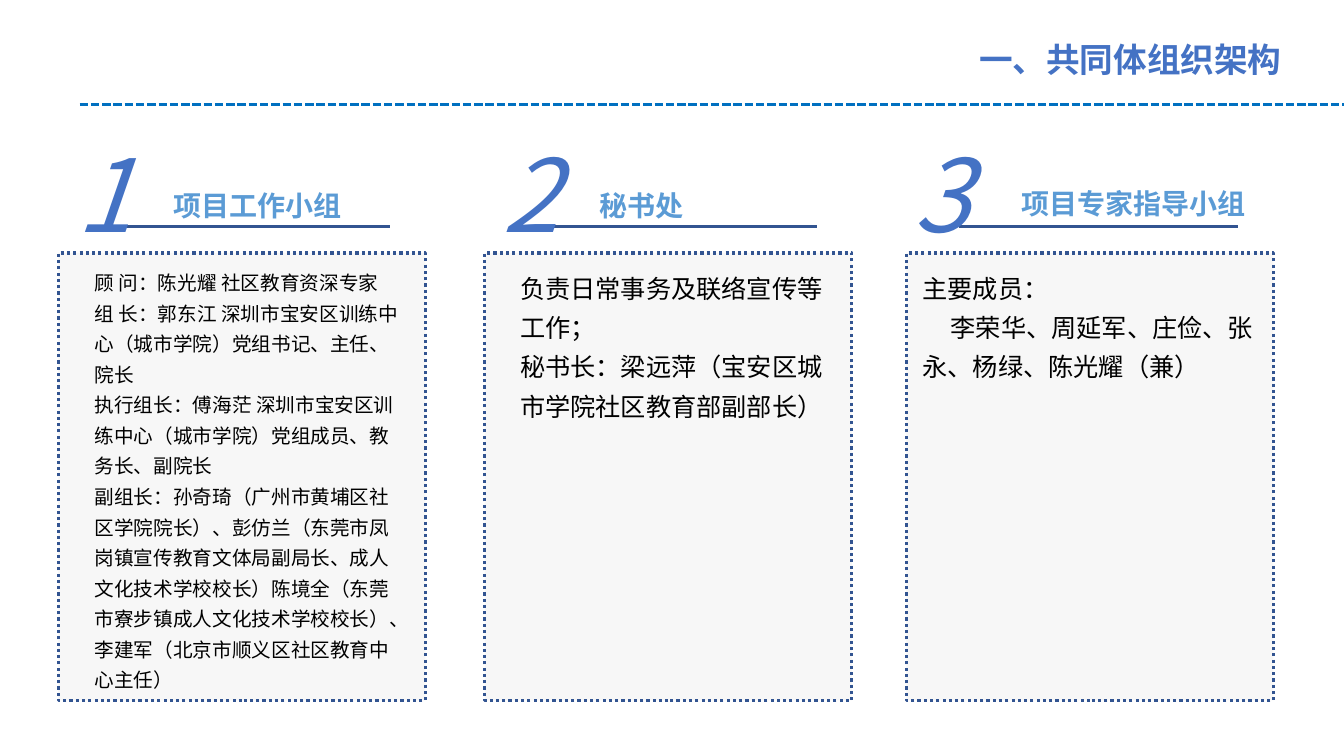
from pptx import Presentation
from pptx.dml.color import RGBColor
from pptx.enum import dml, shapes, text
from pptx.oxml import ns
from pptx.util import Inches, Pt
from lxml import etree

BLUE = RGBColor(0x44, 0x72, 0xC4)
SKY = RGBColor(0x5B, 0x9B, 0xD5)
NAVY = RGBColor(0x32, 0x54, 0x91)
TEAL = RGBColor(0x00, 0x70, 0xC0)
GREY = RGBColor(0xF2, 0xF2, 0xF2)
BLACK = RGBColor(0, 0, 0)
SANS = "Noto Sans CJK SC"
BOLD = "Noto Sans CJK JP"
DASH = dml.MSO_LINE

COLS = [
    dict(num="1", left=0.58, digit=0.66, head="项目工作小组", spot=(1.59, 1.8, 3.85, 0.47),
         body=(0.84, 2.57, 3.29, 4.38), size=14, paras=[
             ("顾 问：陈光耀 社区教育资深专家", 0),
             ("组 长：郭东江 深圳市宝安区训练中心（城市学院）党组书记、主任、院长", 0),
             ("执行组长：傅海茫 深圳市宝安区训练中心（城市学院）党组成员、教务长、副院长", 0),
             ("副组长：孙奇琦（广州市黄埔区社区学院院长）、彭仿兰（东莞市凤岗镇宣传教育文体局副局长、"
              "成人文化技术学校校长）陈境全（东莞市寮步镇成人文化技术学校校长）、"
              "李建军（北京市顺义区社区教育中心主任）", 0)]),
    dict(num="2", left=4.81, digit=4.89, head="秘书处", spot=(5.82, 1.8, 3.85, 0.47),
         body=(5.06, 2.57, 3.29, 1.67), size=18, paras=[
             ("负责日常事务及联络宣传等工作；", 0),
             ("秘书长：梁远萍（宝安区城市学院社区教育部副部长）", 0)]),
    dict(num="3", left=8.99, digit=8.96, head="项目专家指导小组", spot=(10, 1.78, 2.68, 0.47),
         body=(9.05, 2.57, 3.48, 1.28), size=18, paras=[
             ("主要成员：", 0),
             ("李荣华、周延军、庄俭、张永、杨绿、陈光耀（兼）", 0.28)]),
]


def add_run(para, words, size, color, face=SANS, bold=False, italic=False):
    """Add one styled run to a paragraph."""
    run = para.add_run()
    run.text = words
    font = run.font
    font.size, font.bold, font.italic, font.name = Pt(size), bold, italic, face
    font.color.rgb = color
    east = etree.SubElement(run._r.get_or_add_rPr(), ns.qn("a:ea"))
    east.set("typeface", face)


def add_box(slide, spot):
    """Add a wrapping text box and return its frame."""
    frame = slide.shapes.add_textbox(*map(Inches, spot)).text_frame
    frame.word_wrap = True
    return frame


def add_line(slide, start, end, y, color, width, dash=None):
    """Draw a level line without shadow."""
    line = slide.shapes.add_connector(shapes.MSO_CONNECTOR.STRAIGHT, Inches(start), Inches(y),
                                      Inches(end), Inches(y))
    line.line.color.rgb = color
    line.line.width = Pt(width)
    if dash:
        line.line.dash_style = dash
    etree.SubElement(line._element.spPr, ns.qn("a:effectLst"))


def add_panel(slide, left):
    """Draw the pale panel with a dotted edge."""
    panel = slide.shapes.add_shape(shapes.MSO_SHAPE.RECTANGLE, Inches(left), Inches(2.51),
                                   Inches(3.64), Inches(4.44))
    panel.shadow.inherit = False
    panel.fill.solid()
    panel.fill.fore_color.rgb = GREY
    tint = panel._element.spPr.find(".//" + ns.qn("a:srgbClr"))
    etree.SubElement(tint, ns.qn("a:alpha")).set("val", "60000")
    panel.line.color.rgb = NAVY
    panel.line.width = Pt(2.25)
    panel.line.dash_style = DASH.ROUND_DOT


def add_head(slide, words, spot):
    """Add a column heading."""
    frame = add_box(slide, spot)
    frame.margin_left = frame.margin_right = Inches(0.13)
    frame.margin_top = frame.margin_bottom = Inches(0.07)
    add_run(frame.paragraphs[0], words, 20, SKY, BOLD, bold=True)


def add_digit(slide, num, left):
    """Add the large slanted column number."""
    para = add_box(slide, (left, 2.08, 3.14, 0.68)).paragraphs[0]
    para.line_spacing = Pt(27)
    add_run(para, num, 72, BLUE, italic=True)


def add_body(slide, spot, size, paras):
    """Add the column text, one paragraph per entry."""
    frame = add_box(slide, spot)
    for i, (words, indent) in enumerate(paras):
        para = frame.add_paragraph() if i else frame.paragraphs[0]
        para.line_spacing = 1.3
        if indent:
            para._p.get_or_add_pPr().set("indent", str(Inches(indent)))
        add_run(para, words, size, BLACK)


def set_title(slide, words):
    """Place and style the slide title."""
    title = slide.shapes.title
    title.left, title.top, title.width, title.height = map(Inches, (9.61, 0.34, 3.21, 0.91))
    frame = title.text_frame
    frame.word_wrap = False
    frame.auto_size = text.MSO_AUTO_SIZE.NONE
    frame.vertical_anchor = text.MSO_ANCHOR.TOP
    para = frame.paragraphs[0]
    para.alignment = text.PP_ALIGN.LEFT
    add_run(para, words, 24, BLUE, bold=True)


def main():
    """Build and save the slide."""
    deck = Presentation()
    deck.slide_width, deck.slide_height = Inches(13.33), Inches(7.5)
    slide = deck.slides.add_slide(deck.slide_layouts[5])
    set_title(slide, "一、共同体组织架构")
    add_line(slide, 0.79, 13.33, 1.04, TEAL, 2, DASH.SQUARE_DOT)
    for col in COLS:
        left = col["left"]
        add_head(slide, col["head"], col["spot"])
        add_line(slide, left + 0.52, left + 3.29, 2.25, NAVY, 2.25)
        add_digit(slide, col["num"], col["digit"])
        add_panel(slide, left)
        add_body(slide, col["body"], col["size"], col["paras"])
    deck.save("out.pptx")


if __name__ == "__main__":
    main()
